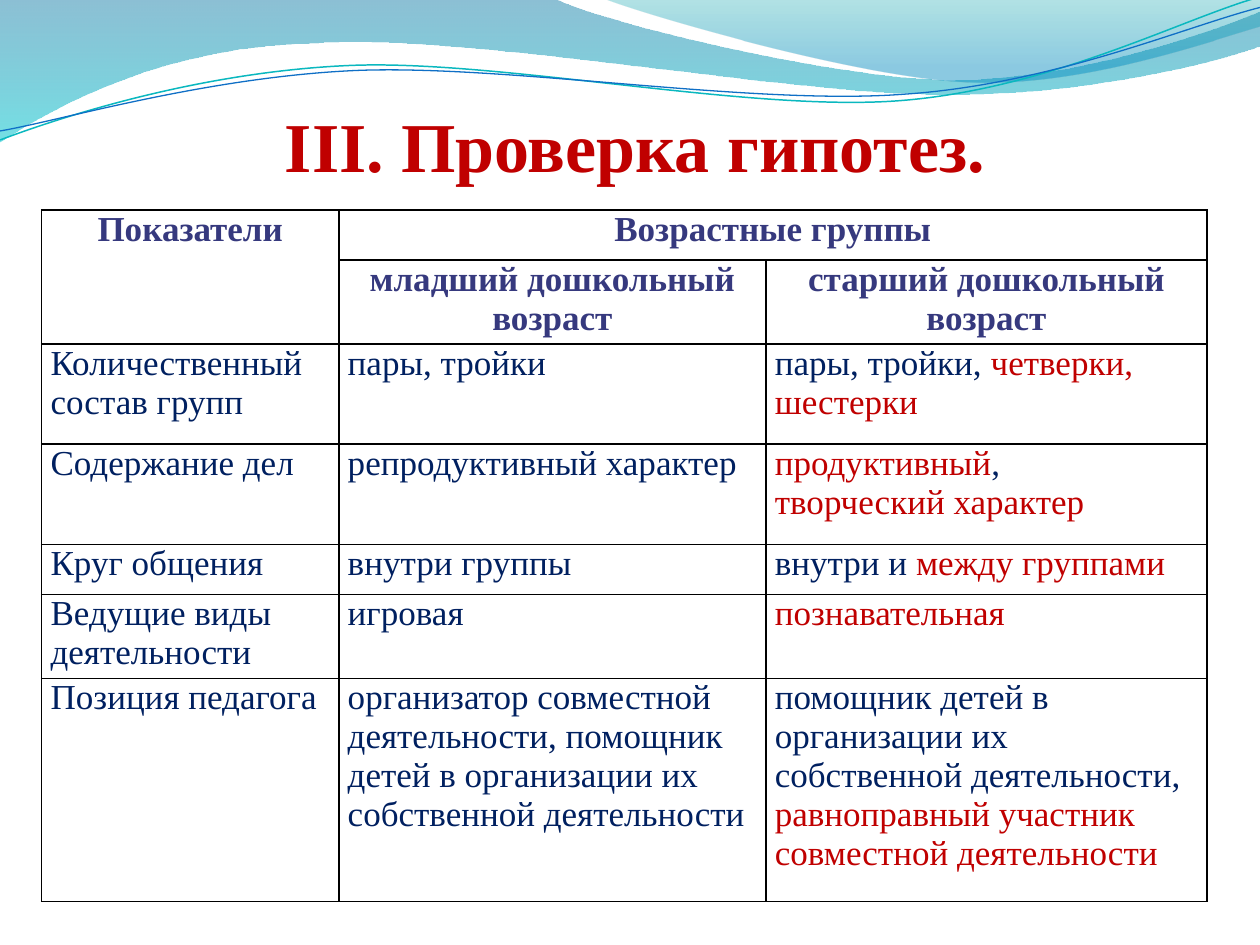
import math

import lxml.etree
import pptx
import pptx.dml.color
import pptx.enum.text
import pptx.oxml.ns
import pptx.util

Cm = pptx.util.Cm
Pt = pptx.util.Pt
qn = pptx.oxml.ns.qn
PP_ALIGN = pptx.enum.text.PP_ALIGN

THEME = {
    "font": "Times New Roman", "title_size": 40, "table_size": 20,
    "accent": "C00000", "header": "36397E", "body": "002060",
    "border": "000000", "border_width": 1, "paper": "FFFFFF",
}

TITLE = "III. Проверка гипотез."
CORNER, GROUPS = "Показатели", "Возрастные группы"
AGES = ["младший дошкольный возраст", "старший дошкольный возраст"]
# Indicator, younger group, then the older group's runs as (text, colour key)
ROWS = [
    ("Количественный состав групп", "пары, тройки",
     [("пары, тройки, ", "body"), ("четверки, шестерки", "accent")]),
    ("Содержание дел", "репродуктивный характер",
     [("продуктивный", "accent"), (", \n", "body"), ("творческий характер", "accent")]),
    ("Круг общения", "внутри группы",
     [("внутри и ", "body"), ("между группами", "accent")]),
    ("Ведущие виды деятельности", "игровая", [("познавательная", "accent")]),
    ("Позиция педагога",
     "организатор совместной деятельности, помощник детей в организации их "
     "собственной деятельности",
     [("помощник детей в организации их собственной деятельности, ", "body"),
      ("равноправный участник совместной деятельности", "accent")]),
]
COL_WIDTHS = [5.99, 8.61, 8.89]
ROW_HEIGHTS = [1.01, 1.69, 2.02, 2.02, 1.01, 1.64, 4.49]

# Wave outlines in cm: a one-point step is a line, a three-point step a Bezier curve.
# Gradient stops are (position, colour, opacity %), from top to bottom.
BANDS = [
    ([[(0, 0)], [(11.18, -0.03)],
      [(12.09, 0.43), (16.87, 1.6), (19.25, 1.6)],
      [(21.67, 1.6), (24.33, 0.66), (25.4, 0.23)],
      [(25.43, 0.91)],
      [(24.97, 1.12), (22.1, 1.93), (18.95, 1.9)],
      [(15.8, 1.9), (9.7, 0.71), (6.53, 0.86)],
      [(3.28, 0.91), (1.17, 2.11), (-0.03, 2.87)],
      [(0, 0)]],
     [(0, "0074A1", 45), (1, "00C6CF", 55)]),
    ([[(12.17, -0.03)],
      [(12.93, 0.28), (17.32, 1.57), (19.53, 1.65)],
      [(21.82, 1.75), (24.41, 0.81), (25.4, 0.53)],
      [(25.4, 0)], [(12.17, -0.03)]],
     [(0, "00A1A9", 30), (0.8, "008BBF", 45)]),
]
STRANDS = [
    ([[(0, 2.82)],
      [(1.22, 2.36), (4.01, 1.45), (7.04, 1.32)],
      [(10.03, 1.19), (15.06, 2.26), (18.11, 2.03)],
      [(21.16, 1.8), (23.83, 0.38), (25.35, -0.05)]], "0AB8BF", 0.85),
    ([[(0, 2.64)],
      [(1.19, 2.44), (4.17, 1.55), (7.19, 1.42)],
      [(10.24, 1.3), (15.16, 2.13), (18.21, 1.9)],
      [(21.23, 1.7), (23.9, 0.53), (25.4, 0.15)]], "0F6FC6", 0.75),
]
STRAND_TILT = 2.7
STRAND_CENTER = (12.67, 1.48)


def rgb(value):
    return pptx.dml.color.RGBColor.from_string(value)


def add_text(tf, text, color="body", size=THEME["table_size"], bold=False,
             align=PP_ALIGN.LEFT):
    """Fill the first paragraph with a string or a list of (text, colour key) runs."""
    p = tf.paragraphs[0]
    p.alignment = align
    for content, key in [(text, color)] if isinstance(text, str) else text:
        r = p.add_run()
        r.text = content.rstrip("\n")
        r.font.name, r.font.size, r.font.bold = THEME["font"], Pt(size), bold
        r.font.color.rgb = rgb(THEME[key])
        if content.endswith("\n"):
            p.add_line_break()


def level(point):
    """Turn a point of a tilted strand back to where it lies before rotation."""
    angle = math.radians(STRAND_TILT)
    cx, cy = STRAND_CENTER
    x, y = point[0] - cx, point[1] - cy
    return (cx + x * math.cos(angle) - y * math.sin(angle),
            cy + x * math.sin(angle) + y * math.cos(angle))


def add_outline(slide, steps, close):
    """Build the outline through its anchors, then bend the three-point steps."""
    steps = [[(Cm(x), Cm(y)) for x, y in step] for step in steps]
    anchors = [step[-1] for step in steps]
    builder = slide.shapes.build_freeform(*anchors[0])
    builder.add_line_segments(anchors[1:], close=close)
    sp = builder.convert_to_shape()
    sp.shadow.inherit = False
    lines = list(sp._element.spPr.iter(qn("a:lnTo")))
    for line, step in zip(lines, steps[1:]):
        if len(step) == 3:
            curve = lxml.etree.Element(qn("a:cubicBezTo"))
            for x, y in step:
                lxml.etree.SubElement(curve, qn("a:pt"),
                                      x=str(x - sp.left), y=str(y - sp.top))
            line.getparent().replace(line, curve)
    return sp


def add_band(slide, steps, stops):
    sp = add_outline(slide, steps, True)
    sp.line.fill.background()
    sp.fill.gradient()
    sp.fill.gradient_angle = 270
    for stop, (position, color, _) in zip(sp.fill.gradient_stops, stops):
        stop.position = position
        stop.color.rgb = rgb(color)
    colors = list(sp._element.spPr.iter(qn("a:srgbClr")))
    for element, (_, _, opacity) in zip(colors, stops):
        for old in list(element):
            element.remove(old)
        lxml.etree.SubElement(element, qn("a:alpha"), val=str(opacity * 1000))


def add_strand(slide, steps, color, width):
    sp = add_outline(slide, [[level(point) for point in step] for step in steps], False)
    sp.rotation = 360 - STRAND_TILT
    sp.fill.background()
    sp.line.color.rgb = rgb(color)
    sp.line.width = Pt(width)


def format_cell(cell):
    cell.margin_left = cell.margin_right = Cm(0.18)
    cell.margin_top = cell.margin_bottom = 0
    tcPr = cell._tc.get_or_add_tcPr()
    for side in ("lnL", "lnR", "lnT", "lnB"):
        ln = lxml.etree.SubElement(tcPr, qn("a:" + side),
                                   w=str(Pt(THEME["border_width"])))
        fill = lxml.etree.SubElement(ln, qn("a:solidFill"))
        lxml.etree.SubElement(fill, qn("a:srgbClr"), val=THEME["border"])
    cell.fill.background()


def add_comparison(slide):
    table = slide.shapes.add_table(
        len(ROW_HEIGHTS), len(COL_WIDTHS), Cm(0.84), Cm(4.23),
        Cm(sum(COL_WIDTHS)), Cm(sum(ROW_HEIGHTS))).table
    table.first_row = table.horz_banding = False
    for column, width in zip(table.columns, COL_WIDTHS):
        column.width = Cm(width)
    for row, height in zip(table.rows, ROW_HEIGHTS):
        row.height = Cm(height)
    for cell in table.iter_cells():
        format_cell(cell)
    table.cell(0, 0).merge(table.cell(1, 0))
    table.cell(0, 1).merge(table.cell(0, 2))

    headers = {(0, 0): CORNER, (0, 1): GROUPS, (1, 1): AGES[0], (1, 2): AGES[1]}
    for place, text in headers.items():
        add_text(table.cell(*place).text_frame, text, color="header", bold=True,
                 align=PP_ALIGN.CENTER)
    for i, row in enumerate(ROWS, start=2):
        for j, text in enumerate(row):
            add_text(table.cell(i, j).text_frame, text)
    last = table.cell(len(ROW_HEIGHTS) - 1, len(COL_WIDTHS) - 1)
    last.fill.solid()
    last.fill.fore_color.rgb = rgb(THEME["paper"])


def add_title(slide):
    tf = slide.shapes.add_textbox(Cm(1.27), Cm(2.34), Cm(23.06), Cm(1.42)).text_frame
    tf.word_wrap = True
    tf.vertical_anchor = pptx.enum.text.MSO_ANCHOR.BOTTOM
    tf.margin_left = tf.margin_right = tf.margin_bottom = 0
    add_text(tf, TITLE, color="accent", size=THEME["title_size"], bold=True,
             align=PP_ALIGN.CENTER)


prs = pptx.Presentation()
prs.slide_width, prs.slide_height = Cm(25.4), Cm(19.05)
slide = prs.slides.add_slide(prs.slide_layouts[6])
for band in BANDS:
    add_band(slide, *band)
for strand in STRANDS:
    add_strand(slide, *strand)
add_title(slide)
add_comparison(slide)
prs.save("out.pptx")
